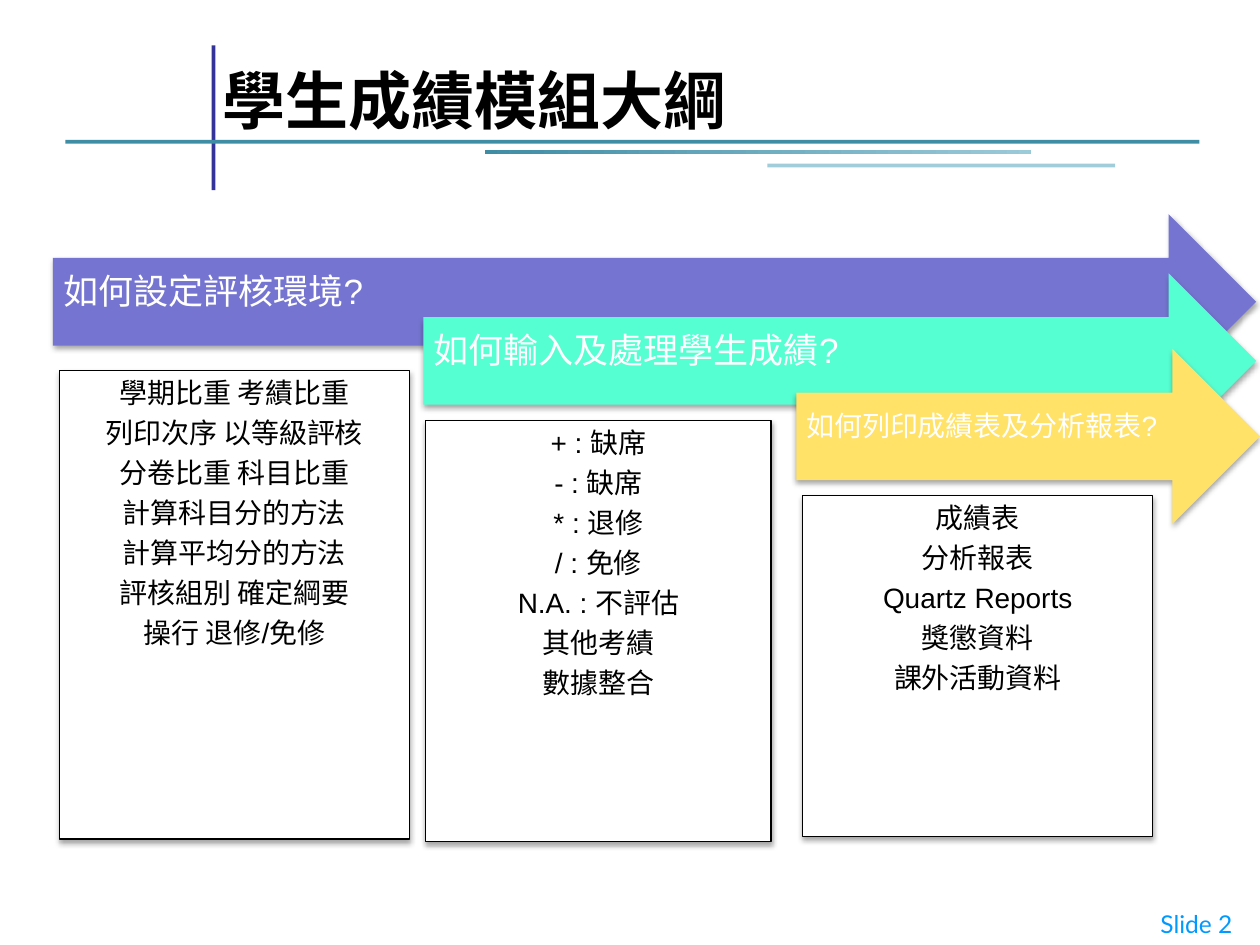
from dataclasses import dataclass

import lxml.etree
import pptx
import pptx.dml.color
import pptx.enum.shapes
import pptx.enum.text
import pptx.oxml.ns
import pptx.util

SHAPE = pptx.enum.shapes.MSO_SHAPE
ALIGN = pptx.enum.text.PP_ALIGN
ANCHOR = pptx.enum.text.MSO_ANCHOR

SLIDE_WIDTH = pptx.util.Inches(10)
SLIDE_HEIGHT = pptx.util.Inches(7.5)
TEAL, PALE_TEAL = "3F8DA5", "9BCAD9"
ARROW_HEIGHT = 18.53
ARROW_INSETS = (0.08, 0.08, 0.28, 0.22)
BOX_INSETS = (0.07, 0.07, 0.07, 0.07)


@dataclass(frozen=True)
class Area:
    """A rectangle in percent of the slide's width and height."""
    left: float
    top: float
    width: float
    height: float

    def emu(self) -> tuple[int, int, int, int]:
        return (int(SLIDE_WIDTH * self.left / 100), int(SLIDE_HEIGHT * self.top / 100),
                int(SLIDE_WIDTH * self.width / 100), int(SLIDE_HEIGHT * self.height / 100))


@dataclass(frozen=True)
class Rule:
    area: Area
    color: str
    end_color: str = ""


@dataclass(frozen=True)
class Stage:
    question: str
    question_size: int
    color: str
    arrow: Area
    box: Area
    topics: tuple[str, ...]


RULES = (
    Rule(Area(16.8, 4.8, 0.3, 15.33), "333399"),
    Rule(Area(5.2, 14.8, 90, 0.4), TEAL),
    Rule(Area(38.5, 15.87, 43.3, 0.4), TEAL, PALE_TEAL),
    Rule(Area(60.9, 17.33, 27.6, 0.4), "A1CDDB"),
)

STAGES = (
    Stage("如何設定評核環境?", 20, "7575D1",
          Area(4.2, 22.67, 95.5, ARROW_HEIGHT), Area(4.7, 39.2, 27.8, 49.6),
          ("學期比重 考績比重", "列印次序 以等級評核", "分卷比重 科目比重",
           "計算科目分的方法", "計算平均分的方法", "評核組別 確定綱要",
           "操行 退修/免修")),
    Stage("如何輸入及處理學生成績?", 20, "56FFD2",
          Area(33.6, 28.93, 66.1, ARROW_HEIGHT), Area(33.8, 44.53, 27.4, 44.53),
          ("+ : 缺席", "- : 缺席", "* : 退修", "/ : 免修", "N.A. : 不評估",
           "其他考績", "數據整合")),
    Stage("如何列印成績表及分析報表?", 16, "FFE267",
          Area(63.2, 36.93, 36.8, ARROW_HEIGHT), Area(63.7, 52.4, 27.8, 36.13),
          ("成績表", "分析報表", "Quartz Reports", "獎懲資料", "課外活動資料")),
)


def rgb(color: str) -> pptx.dml.color.RGBColor:
    return pptx.dml.color.RGBColor.from_string(color)


def write(shape, *lines: str, size: float, color: str = "000000", font: str = "Arial",
          bold: bool = False, align=ALIGN.LEFT, anchor=ANCHOR.TOP,
          insets=(0.1, 0.05, 0.1, 0.05), line_spacing: float = 1.0,
          space_after: float = 0) -> None:
    """Fill a shape with one paragraph per line; space_after is a share of the size."""
    frame = shape.text_frame
    frame.word_wrap = True
    frame.vertical_anchor = anchor
    (frame.margin_left, frame.margin_top,
     frame.margin_right, frame.margin_bottom) = map(pptx.util.Inches, insets)
    for number, line in enumerate(lines):
        paragraph = frame.add_paragraph() if number else frame.paragraphs[0]
        paragraph.alignment = align
        paragraph.line_spacing = line_spacing
        paragraph.space_after = pptx.util.Pt(size * space_after)
        run = paragraph.add_run()
        run.text = line
        run.font.name = font
        run.font.size = pptx.util.Pt(size)
        run.font.bold = bold
        run.font.color.rgb = rgb(color)


def add_filled(slide, preset, area: Area, color: str):
    shape = slide.shapes.add_shape(preset, *area.emu())
    shape.shadow.inherit = False
    shape.fill.solid()
    shape.fill.fore_color.rgb = rgb(color)
    shape.line.fill.background()
    return shape


def add_soft_shadow(shape) -> None:
    qn = pptx.oxml.ns.qn
    effects = shape.element.spPr.find(qn("a:effectLst"))
    shadow = lxml.etree.SubElement(
        effects, qn("a:outerShdw"), blurRad=str(pptx.util.Pt(3.1)),
        dist=str(pptx.util.Pt(1.8)), dir="5400000", rotWithShape="0")
    black = lxml.etree.SubElement(shadow, qn("a:srgbClr"), val="000000")
    lxml.etree.SubElement(black, qn("a:alpha"), val="35000")


def draw_rule(slide, rule: Rule) -> None:
    bar = add_filled(slide, SHAPE.RECTANGLE, rule.area, rule.color)
    if rule.end_color:
        bar.fill.gradient()
        bar.fill.gradient_angle = 0
        for stop, color in zip(bar.fill.gradient_stops, (rule.color, rule.end_color)):
            stop.color.rgb = rgb(color)


def draw_stage(slide, stage: Stage) -> None:
    arrow = add_filled(slide, SHAPE.RIGHT_ARROW, stage.arrow, stage.color)
    add_soft_shadow(arrow)
    write(arrow, stage.question, size=stage.question_size, color="FFFFFF",
          anchor=ANCHOR.MIDDLE, insets=ARROW_INSETS, line_spacing=0.9, space_after=0.35)

    box = add_filled(slide, SHAPE.RECTANGLE, stage.box, "FFFFFF")
    box.line.color.rgb = rgb("000000")
    box.line.width = pptx.util.Pt(0.75)
    add_soft_shadow(box)
    write(box, *stage.topics, size=16, align=ALIGN.CENTER, insets=BOX_INSETS,
          line_spacing=0.9, space_after=0.35)


def main() -> None:
    deck = pptx.Presentation()
    deck.slide_width, deck.slide_height = SLIDE_WIDTH, SLIDE_HEIGHT
    slide = deck.slides.add_slide(deck.slide_layouts[6])

    for rule in RULES:
        draw_rule(slide, rule)

    page_label = slide.shapes.add_textbox(*Area(80, 95.6, 18.8, 4.4).emu())
    write(page_label, "Slide 2", size=14, font="Lato", color="0099FF",
          align=ALIGN.RIGHT, anchor=ANCHOR.MIDDLE)

    title = slide.shapes.add_textbox(*Area(16.7, 4.93, 43.3, 10.27).emu())
    write(title, "學生成績模組大綱", size=36, bold=True, anchor=ANCHOR.BOTTOM)

    for stage in STAGES:
        draw_stage(slide, stage)

    deck.save("out.pptx")


if __name__ == "__main__":
    main()
